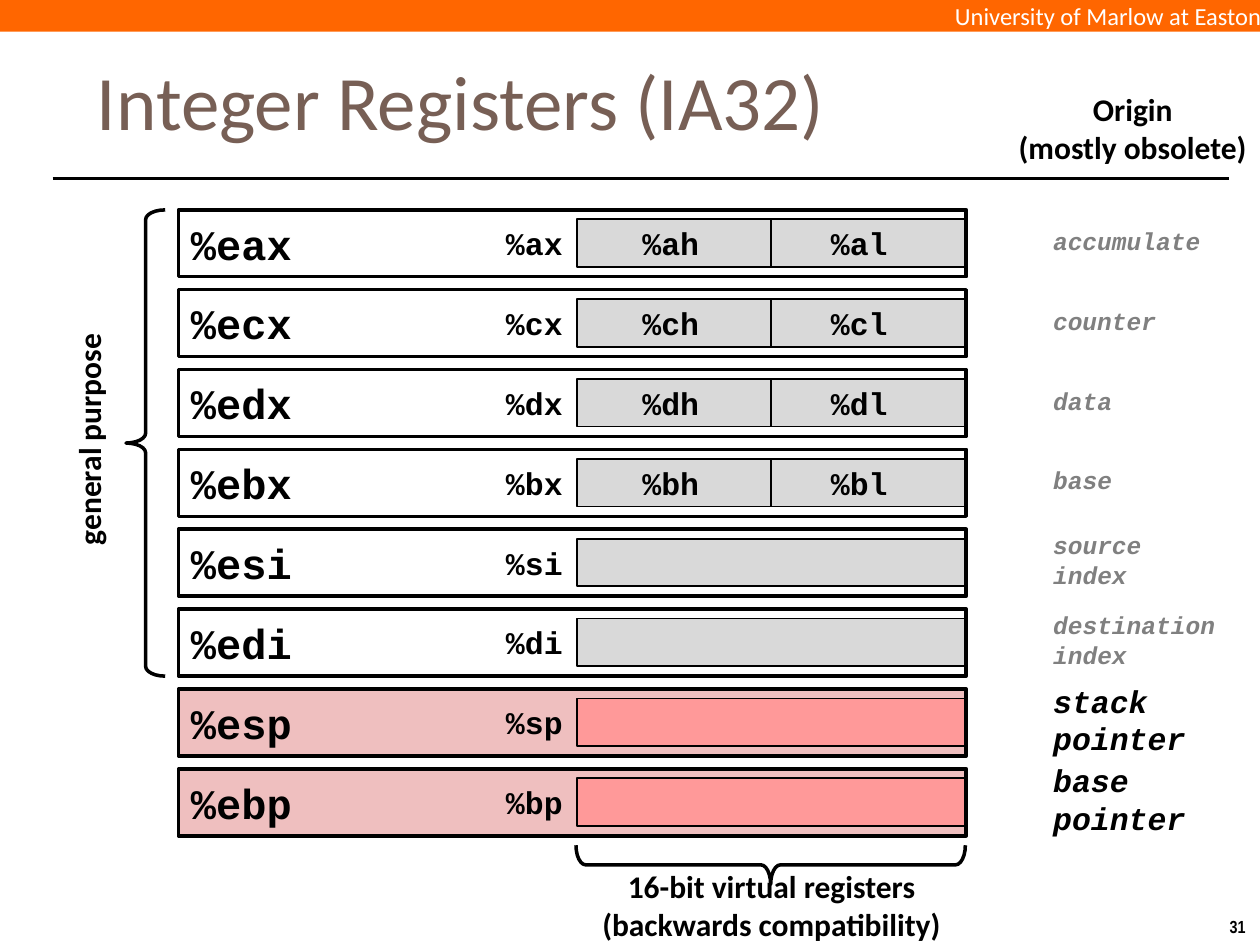
from pptx import Presentation
from pptx.dml.color import RGBColor
from pptx.enum.shapes import MSO_CONNECTOR, MSO_SHAPE
from pptx.enum.text import MSO_ANCHOR, PP_ALIGN
from pptx.oxml.ns import qn
from pptx.util import Cm, Pt
from lxml import etree

RECTANGLE, RIGHT_BRACE = MSO_SHAPE.RECTANGLE, MSO_SHAPE.RIGHT_BRACE
STRAIGHT = MSO_CONNECTOR.STRAIGHT
LEFT, CENTER, RIGHT = PP_ALIGN.LEFT, PP_ALIGN.CENTER, PP_ALIGN.RIGHT
TOP, MIDDLE = MSO_ANCHOR.TOP, MSO_ANCHOR.MIDDLE

COLORS = {
    "black": "000000",
    "white": "FFFFFF",
    "orange": "FF6600",
    "title": "775F55",
    "gray_text": "808080",
    "gray": "D9D9D9",
    "pink": "EFBFBF",
    "red": "FF9999",
}
SANS, MONO = "Calibri", "Courier New"

ROW_LEFT, ROW_TOP, ROW_WIDTH, ROW_HEIGHT = 3.6, 4.23, 15.88, 1.35
ROW_PITCH = 1.61
VIRTUAL_LEFT, VIRTUAL_WIDTH, VIRTUAL_HEIGHT = 11.63, 7.83, 0.96

# 32-bit name, 16-bit name, byte names, origin, is a pointer register
REGISTERS = [
    ("%eax", "%ax", ("%ah", "%al"), "accumulate", False),
    ("%ecx", "%cx", ("%ch", "%cl"), "counter", False),
    ("%edx", "%dx", ("%dh", "%dl"), "data", False),
    ("%ebx", "%bx", ("%bh", "%bl"), "base", False),
    ("%esi", "%si", (), "source\nindex", False),
    ("%edi", "%di", (), "destination\nindex", False),
    ("%esp", "%sp", (), "stack\npointer", True),
    ("%ebp", "%bp", (), "base\npointer", True),
]


def rgb(name):
    return RGBColor.from_string(COLORS[name])


def write_text(shape, text, size, font=SANS, color="black", bold=True,
               italic=False, align=LEFT, anchor=TOP, wrap=False):
    frame = shape.text_frame
    frame.text = text
    frame.word_wrap = wrap
    frame.vertical_anchor = anchor
    for paragraph in frame.paragraphs:
        paragraph.alignment = align
        paragraph.font.name = font
        paragraph.font.size = Pt(size)
        paragraph.font.bold = bold
        paragraph.font.italic = italic
        paragraph.font.color.rgb = rgb(color)


def add_label(slide, left, top, width, height, text, size, **style):
    box = slide.shapes.add_textbox(Cm(left), Cm(top), Cm(width), Cm(height))
    write_text(box, text, size, **style)
    return box


def add_mono_label(slide, left, middle, text, size=18, **style):
    """Add a fixed-width label, sized from its text and centred on a height."""
    lines = text.split("\n")
    width = 0.51 + 0.0212 * size * max(len(line) for line in lines)
    height = 0.25 + 0.043 * size * len(lines)
    add_label(slide, left, middle - height / 2, width, height, text, size,
              font=MONO, **style)


def add_box(slide, left, top, width, height, fill, line_width=None):
    box = slide.shapes.add_shape(RECTANGLE, Cm(left), Cm(top), Cm(width), Cm(height))
    box.shadow.inherit = False
    box.fill.solid()
    box.fill.fore_color.rgb = rgb(fill)
    if line_width is None:
        box.line.fill.background()
    else:
        box.line.color.rgb = rgb("black")
        box.line.width = Pt(line_width)
    return box


def add_line(slide, x1, y1, x2, y2, width):
    line = slide.shapes.add_connector(STRAIGHT, Cm(x1), Cm(y1), Cm(x2), Cm(y2))
    line.line.color.rgb = rgb("black")
    line.line.width = Pt(width)
    etree.SubElement(line._element.spPr, qn("a:effectLst"))


def add_brace(slide, left, top, width, height, rotation):
    brace = slide.shapes.add_shape(RIGHT_BRACE, Cm(left), Cm(top), Cm(width), Cm(height))
    brace.rotation = rotation
    brace.adjustments[0] = 0.25
    brace.adjustments[1] = 0.5
    brace.shadow.inherit = False
    brace.fill.background()
    brace.line.color.rgb = rgb("black")
    brace.line.width = Pt(2)


def add_frame(slide):
    """Add the header bar, title, rule and slide number."""
    header = add_box(slide, 0, 0, 25.43, 0.64, "orange")
    write_text(header, "University of Marlow at Easton", 14, color="white",
               bold=False, align=RIGHT, anchor=MIDDLE)
    frame = header.text_frame
    frame.margin_left = frame.margin_right = frame.margin_top = frame.margin_bottom = 0

    title = slide.shapes.title
    title.left, title.top, title.width, title.height = Cm(1.7), Cm(0.64), Cm(22.66), Cm(2.74)
    write_text(title, "Integer Registers (IA32)", 44, color="title",
               bold=False, anchor=MIDDLE, wrap=True)

    add_line(slide, 1.06, 3.6, 24.77, 3.6, 1.5)
    add_label(slide, 24.54, 18.35, 0.86, 0.69, "31", 10, font="Arial Narrow")


def add_register(slide, index, name, alias, byte_names, origin, is_pointer):
    top = ROW_TOP + index * ROW_PITCH
    middle = top + ROW_HEIGHT / 2
    virtual_top = top + 0.19

    row = add_box(slide, ROW_LEFT, top, ROW_WIDTH, ROW_HEIGHT,
                  "pink" if is_pointer else "white", 2)
    write_text(row, name, 24, font=MONO, anchor=MIDDLE, wrap=True)
    add_box(slide, VIRTUAL_LEFT, virtual_top, VIRTUAL_WIDTH, VIRTUAL_HEIGHT,
            "red" if is_pointer else "gray", 1)
    add_mono_label(slide, 9.95, middle, alias)

    if byte_names:
        center = VIRTUAL_LEFT + VIRTUAL_WIDTH / 2
        add_line(slide, center, virtual_top, center, virtual_top + VIRTUAL_HEIGHT, 1)
    for left, byte_name in zip((12.7, 16.5), byte_names):
        add_mono_label(slide, left, middle, byte_name)

    add_mono_label(slide, 20.98, middle - 0.05, origin,
                   size=18 if is_pointer else 14,
                   color="black" if is_pointer else "gray_text", italic=True)


def add_annotations(slide):
    add_brace(slide, 15.14, 13.51, 0.79, 7.85, 90)
    add_label(slide, 11.86, 17.35, 7.39, 1.8,
              "16-bit virtual registers\n(backwards compatibility)", 18,
              align=CENTER, wrap=True)
    add_brace(slide, 2.54, ROW_TOP, 0.79, 5 * ROW_PITCH + ROW_HEIGHT, 180)
    purpose = add_label(slide, -0.61, 8.33, 4.8, 1.02, "general purpose", 18)
    purpose.rotation = 270
    add_label(slide, 20.27, 1.7, 5.13, 1.8, "Origin\n(mostly obsolete)", 18, align=CENTER)


def main():
    presentation = Presentation()
    presentation.slide_width, presentation.slide_height = Cm(25.4), Cm(19.05)
    slide = presentation.slides.add_slide(presentation.slide_layouts[5])
    add_frame(slide)
    for index, register in enumerate(REGISTERS):
        add_register(slide, index, *register)
    add_annotations(slide)
    presentation.save("out.pptx")


if __name__ == "__main__":
    main()
